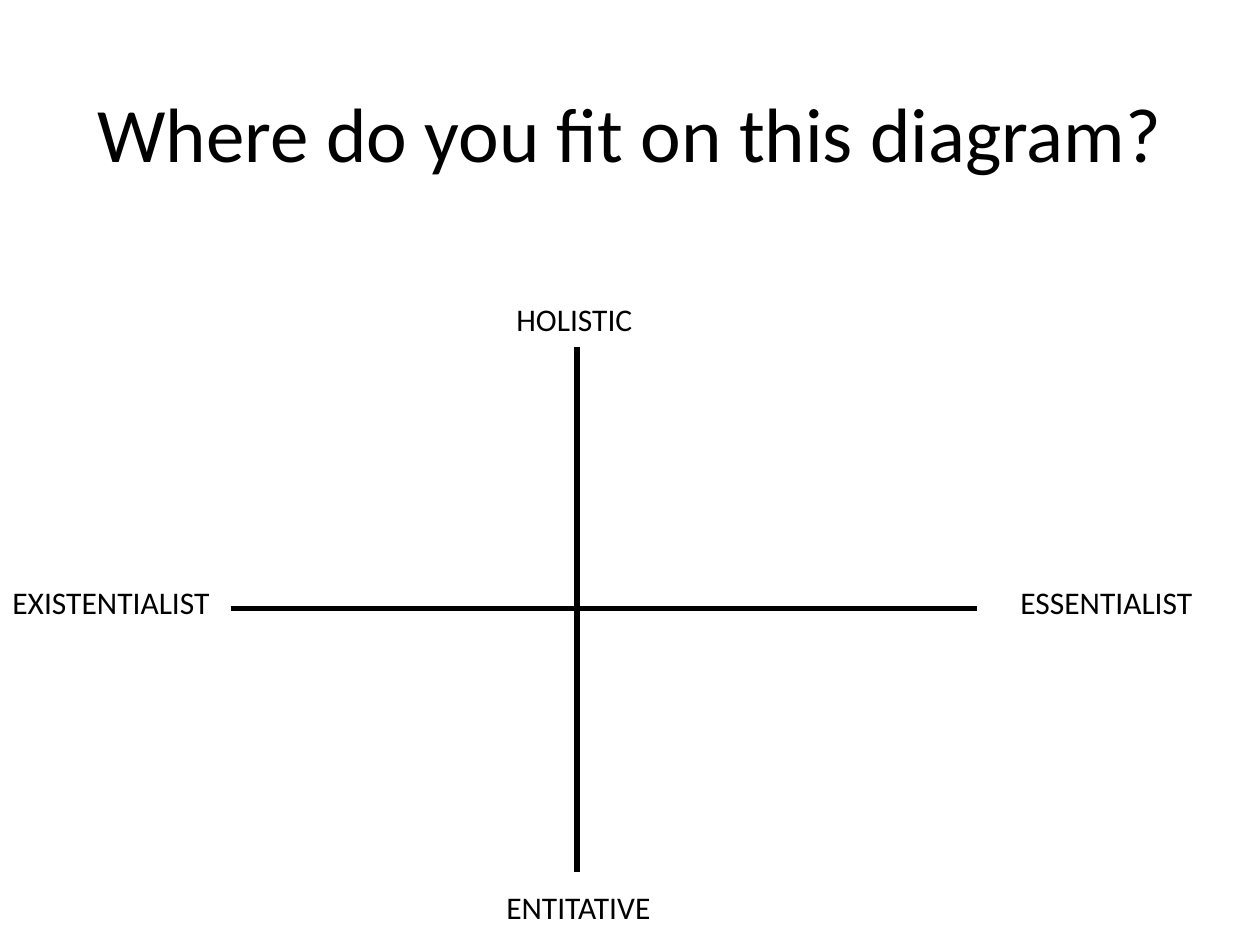
from lxml import etree
from pptx import Presentation
from pptx.dml.color import RGBColor
from pptx.enum.shapes import MSO_CONNECTOR
from pptx.enum.text import MSO_ANCHOR, MSO_AUTO_SIZE, PP_ALIGN
from pptx.oxml.ns import qn
from pptx.util import Inches, Pt

COLORS = {"ink": "000000", "paper": "FFFFFF"}
AXES = [(4.58, 2.75, 4.58, 6.92), (1.83, 4.83, 7.75, 4.83)]
LABELS = [
    ("ENTITATIVE", 3.92, 7, 1.42),
    ("HOLISTIC", 4, 2.33, 1.42),
    ("ESSENTIALIST", 8, 4.58, 1.58),
    ("EXISTENTIALIST", 0, 4.58, 2),
]


class DiagramPage:
    font_name = "Calibri"
    title_size = 44
    label_size = 18
    axis_width = 3

    def __init__(self, deck):
        self.page = deck.slides.add_slide(deck.slide_layouts[5])
        fill = self.page.background.fill
        fill.solid()
        fill.fore_color.rgb = RGBColor.from_string(COLORS["paper"])

    def set_text(self, frame, text, size, align):
        frame.word_wrap = True
        para = frame.paragraphs[0]
        para.text = text
        para.alignment = align
        para.font.name = self.font_name
        para.font.size = Pt(size)
        para.font.color.rgb = RGBColor.from_string(COLORS["ink"])

    def title(self, text, left, top, width, height):
        box = self.page.shapes.title
        box.left, box.top = Inches(left), Inches(top)
        box.width, box.height = Inches(width), Inches(height)
        box.text_frame.vertical_anchor = MSO_ANCHOR.MIDDLE
        self.set_text(box.text_frame, text, self.title_size, PP_ALIGN.CENTER)

    def axis(self, *ends):
        line = self.page.shapes.add_connector(
            MSO_CONNECTOR.STRAIGHT, *(Inches(end) for end in ends))
        line.line.color.rgb = RGBColor.from_string(COLORS["ink"])
        line.line.width = Pt(self.axis_width)
        etree.SubElement(line._element.spPr, qn("a:effectLst"))

    def label(self, text, left, top, width, height=0.4):
        box = self.page.shapes.add_textbox(
            Inches(left), Inches(top), Inches(width), Inches(height))
        box.text_frame.auto_size = MSO_AUTO_SIZE.SHAPE_TO_FIT_TEXT
        self.set_text(box.text_frame, text, self.label_size, PP_ALIGN.LEFT)


def main():
    deck = Presentation()
    deck.slide_width, deck.slide_height = Inches(10), Inches(7.5)
    diagram = DiagramPage(deck)
    diagram.title("Where do you fit on this diagram?", 0.5, 0.42, 9, 1.25)
    for ends in AXES:
        diagram.axis(*ends)
    for label in LABELS:
        diagram.label(*label)
    deck.save("out.pptx")


if __name__ == "__main__":
    main()
